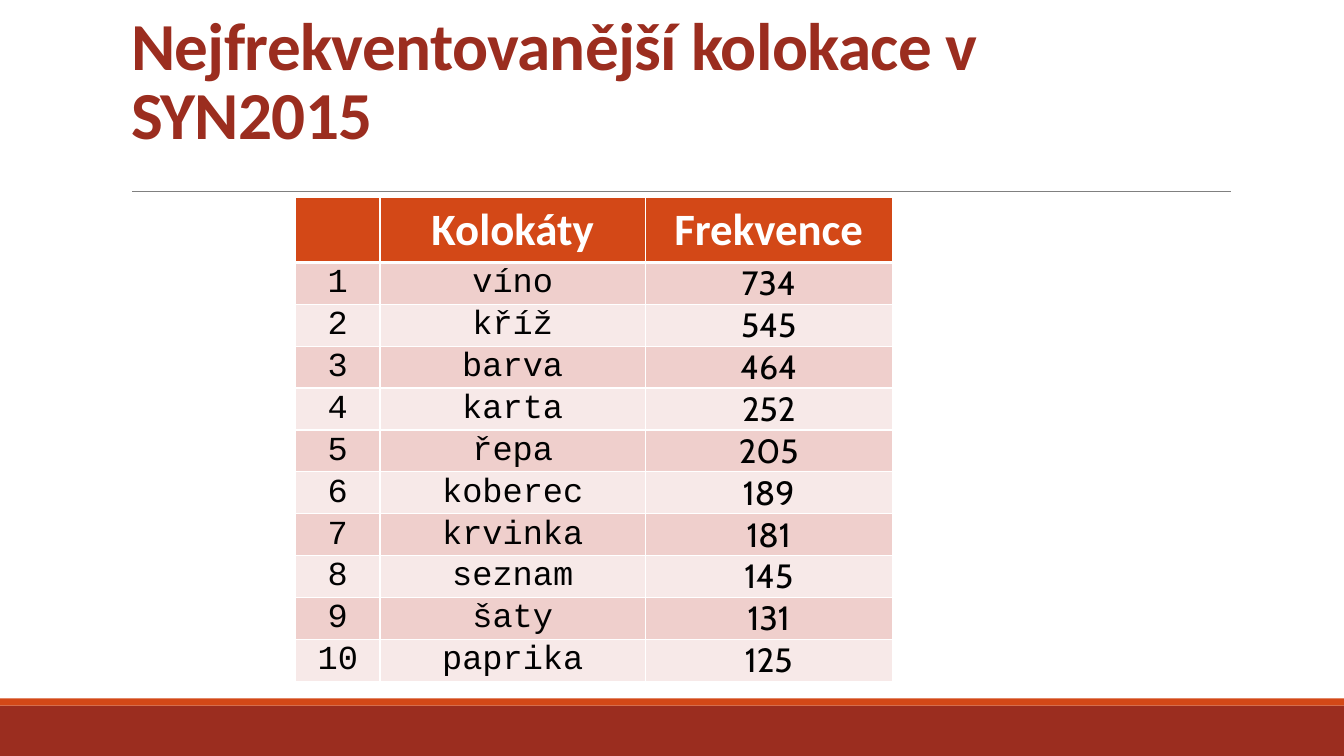
"""Build a slide with the most frequent collocates in SYN2015."""
from dataclasses import dataclass

from lxml.etree import SubElement
from pptx import Presentation
from pptx.dml.color import RGBColor
from pptx.enum.shapes import MSO_CONNECTOR, MSO_SHAPE
from pptx.enum.text import MSO_ANCHOR, MSO_AUTO_SIZE, PP_ALIGN
from pptx.oxml.ns import qn
from pptx.slide import Slide
from pptx.table import _Cell
from pptx.text.text import _Paragraph
from pptx.util import Inches, Pt

BRICK = RGBColor(0x9B, 0x2D, 0x1F)
ORANGE = RGBColor(0xD3, 0x48, 0x17)
GRAY = RGBColor(0x80, 0x80, 0x80)
WHITE = RGBColor(0xFF, 0xFF, 0xFF)
BLACK = RGBColor(0x01, 0x01, 0x01)
ROSE = RGBColor(0xEF, 0xCF, 0xCC)
PALE = RGBColor(0xF7, 0xE9, 0xE8)


@dataclass
class Bar:
    top: float
    height: float
    color: RGBColor


@dataclass
class Style:
    font: str
    size: int
    color: RGBColor
    bold: bool = False


BARS = [Bar(7, 0.5, BRICK), Bar(6.93, 0.07, ORANGE)]
TITLE = Style("Calibri", 48, BRICK, True)
HEAD = Style("Calibri", 32, WHITE, True)
MONO = Style("Courier New", 24, BLACK)
COUNT = Style("Cabin", 24, BLACK)
COLS = [0.84, 2.63, 2.45]
LABELS = ["", "Kolokáty", "Frekvence"]
WORDS = [
    ("víno", 734), ("kříž", 545), ("barva", 464), ("karta", 252),
    ("řepa", 205), ("koberec", 189), ("krvinka", 181), ("seznam", 145),
    ("šaty", 131), ("paprika", 125),
]


def write(para: _Paragraph, text: str, style: Style) -> None:
    """Add one styled run to a paragraph."""
    run = para.add_run()
    run.text = text
    form = {"name": style.font, "size": Pt(style.size), "bold": style.bold}
    for key, value in form.items():
        setattr(run.font, key, value)
    run.font.color.rgb = style.color


def draw_bar(slide: Slide, bar: Bar) -> None:
    """Draw a footer bar across the slide."""
    shape = slide.shapes.add_shape(
        MSO_SHAPE.RECTANGLE, 0, Inches(bar.top), Inches(13.33), Inches(bar.height))
    shape.shadow.inherit = False
    shape.fill.solid()
    shape.fill.fore_color.rgb = bar.color
    shape.line.fill.background()


def draw_rule(slide: Slide) -> None:
    """Draw the thin rule under the title."""
    rule = slide.shapes.add_connector(
        MSO_CONNECTOR.STRAIGHT, Inches(1.31), Inches(1.9), Inches(12.21), Inches(1.9))
    rule.line.color.rgb = GRAY
    rule.line.width = Pt(0.5)
    SubElement(rule._element.spPr, qn("a:effectLst"))


def draw_title(slide: Slide) -> None:
    """Place and fill the title."""
    title = slide.shapes.title
    place = {"left": 1.2, "top": 0.44, "width": 11, "height": 1.13}
    for key, value in place.items():
        setattr(title, key, Inches(value))
    frame = title.text_frame
    form = {"word_wrap": True, "auto_size": MSO_AUTO_SIZE.NONE,
            "vertical_anchor": MSO_ANCHOR.BOTTOM, "margin_right": Inches(0.2)}
    for key, value in form.items():
        setattr(frame, key, value)
    para = frame.paragraphs[0]
    para.alignment = PP_ALIGN.LEFT
    para.line_spacing = 0.85
    write(para, "Nejfrekventovanější kolokace v SYN2015", TITLE)
    para.runs[0].font._element.set("spc", "-50")


def edge(cell: _Cell, top: int, bottom: int) -> None:
    """Give a cell white borders, with widths in points."""
    props = cell._tc.get_or_add_tcPr()
    for side, width in {"L": 1, "R": 1, "T": top, "B": bottom}.items():
        line = SubElement(props, qn(f"a:ln{side}"), w=str(Pt(width)))
        fill = SubElement(line, qn("a:solidFill"))
        SubElement(fill, qn("a:srgbClr"), val=str(WHITE))


def draw_table(slide: Slide) -> None:
    """Draw the table of collocates and counts."""
    rows = [LABELS] + [[str(i), word, str(count)]
                       for i, (word, count) in enumerate(WORDS, 1)]
    table = slide.shapes.add_table(
        len(rows), len(COLS), Inches(2.93), Inches(1.96),
        Inches(sum(COLS)), Inches(4.74)).table
    for col, width in zip(table.columns, COLS):
        col.width = Inches(width)
    inset = Inches(0.01)
    body = {"vertical_anchor": MSO_ANCHOR.MIDDLE, "margin_left": inset,
            "margin_right": inset, "margin_top": inset, "margin_bottom": 0}
    for i, row in enumerate(rows):
        table.rows[i].height = Inches(0.41)
        for j, text in enumerate(row):
            cell = table.cell(i, j)
            edge(cell, 3 if i == 1 else 1, 3 if i == 0 else 1)
            cell.fill.solid()
            cell.fill.fore_color.rgb = (ROSE if i % 2 else PALE) if i else ORANGE
            for key, value in (body if i else {}).items():
                setattr(cell, key, value)
            para = cell.text_frame.paragraphs[0]
            para.alignment = PP_ALIGN.CENTER
            if text:
                write(para, text, (MONO, MONO, COUNT)[j] if i else HEAD)


def main() -> None:
    """Build and save the slide."""
    deck = Presentation()
    deck.slide_width, deck.slide_height = Inches(13.33), Inches(7.5)
    slide = deck.slides.add_slide(deck.slide_layouts[5])
    for bar in BARS:
        draw_bar(slide, bar)
    draw_rule(slide)
    draw_title(slide)
    draw_table(slide)
    deck.save("out.pptx")


if __name__ == "__main__":
    main()
